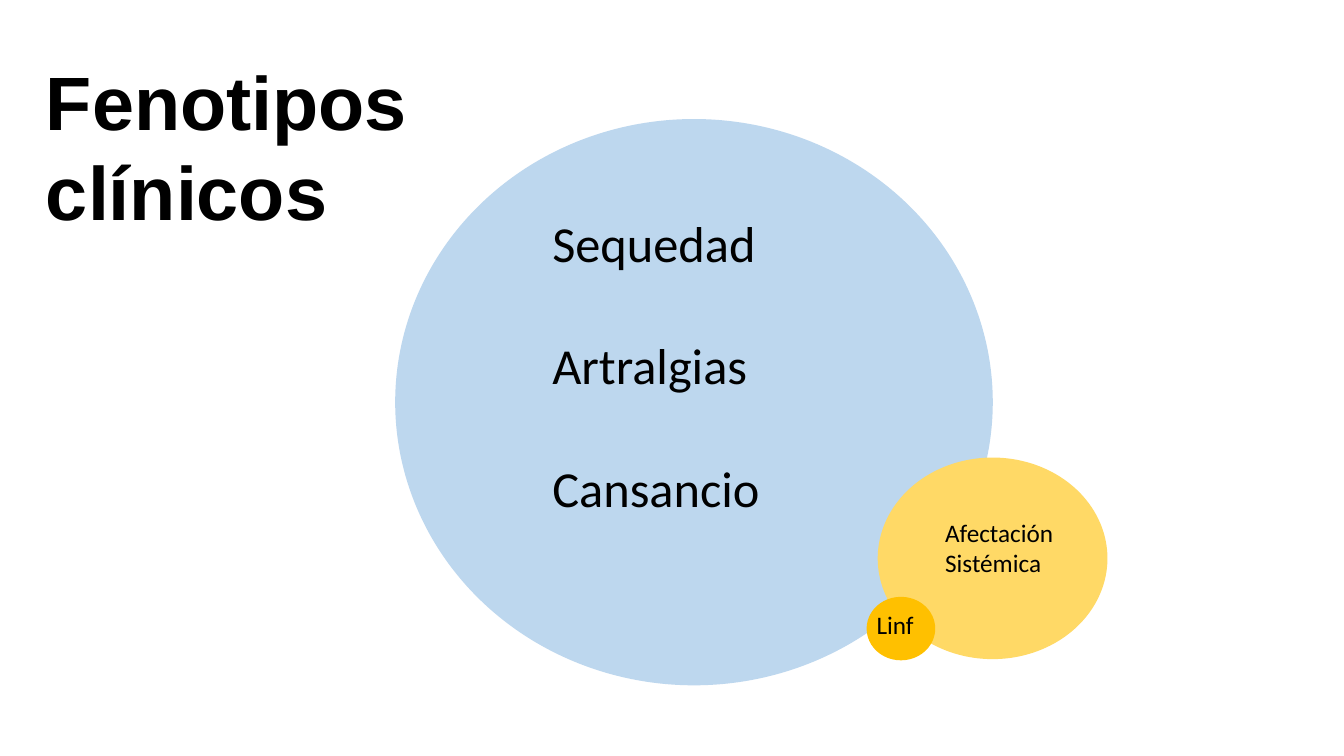
"""Build the slide on clinical phenotypes as three overlapping circles with labels."""
from pptx import Presentation
from pptx.dml.color import RGBColor
from pptx.enum.shapes import MSO_SHAPE as Shape
from pptx.enum.text import MSO_ANCHOR as Anchor
from pptx.util import Cm, Pt

BLACK = RGBColor(0x00, 0x00, 0x00)
BLUE = RGBColor(0xBD, 0xD7, 0xEE)
YELLOW = RGBColor(0xFF, 0xD9, 0x66)
AMBER = RGBColor(0xFF, 0xC0, 0x00)

SLIDE_SIZE = (33.87, 19.05)
CIRCLES = [
    (BLUE, (9.96, 3.0, 15.06, 14.27)),
    (YELLOW, (22.12, 11.53, 5.79, 5.08)),
    (AMBER, (21.84, 15.04, 1.73, 1.6)),
]
SYMPTOMS = {"lines": ["Sequedad", "Artralgias", "Cansancio"],
            "box": (13.67, 5.23, 8.13, 9.45), "gap": 44,
            "font": {"name": "Calibri", "size": Pt(36), "bold": False}}
SYSTEMIC = {"lines": ["Afectación", "Sistémica"],
            "box": (23.57, 12.9, 4.06, 2.13), "gap": 0,
            "font": {"name": "Calibri", "size": Pt(18), "bold": False}}
LYMPHOMA = {"lines": ["Linf"],
            "box": (21.84, 15.24, 2.26, 1.22), "gap": 0,
            "font": {"name": "Calibri", "size": Pt(18), "bold": False}}
TITLE = {"lines": ["Fenotipos clínicos"],
         "box": (0.91, 1.22, 10.29, 4.88), "gap": 0, "anchor": Anchor.MIDDLE,
         "font": {"name": "Arial", "size": Pt(54), "bold": True}}


def add_circle(slide, color, box):
    circle = slide.shapes.add_shape(Shape.OVAL, *map(Cm, box))
    circle.shadow.inherit = False
    circle.fill.solid()
    circle.fill.fore_color.rgb = color
    circle.line.fill.background()


def add_label(slide, label):
    frame = slide.shapes.add_textbox(*map(Cm, label["box"])).text_frame
    frame.word_wrap = True
    frame.vertical_anchor = label.get("anchor", Anchor.TOP)
    for index, line in enumerate(label["lines"]):
        paragraph = frame.add_paragraph() if index else frame.paragraphs[0]
        paragraph.space_before = Pt(label["gap"] if index else 0)
        run = paragraph.add_run()
        run.text = line
        run.font.color.rgb = BLACK
        for attribute, value in label["font"].items():
            setattr(run.font, attribute, value)


def main():
    deck = Presentation()
    deck.slide_width, deck.slide_height = map(Cm, SLIDE_SIZE)
    slide = deck.slides.add_slide(deck.slide_layouts[6])
    for color, box in CIRCLES:
        add_circle(slide, color, box)
    for label in (SYMPTOMS, SYSTEMIC, LYMPHOMA, TITLE):
        add_label(slide, label)
    deck.save("out.pptx")


if __name__ == "__main__":
    main()
